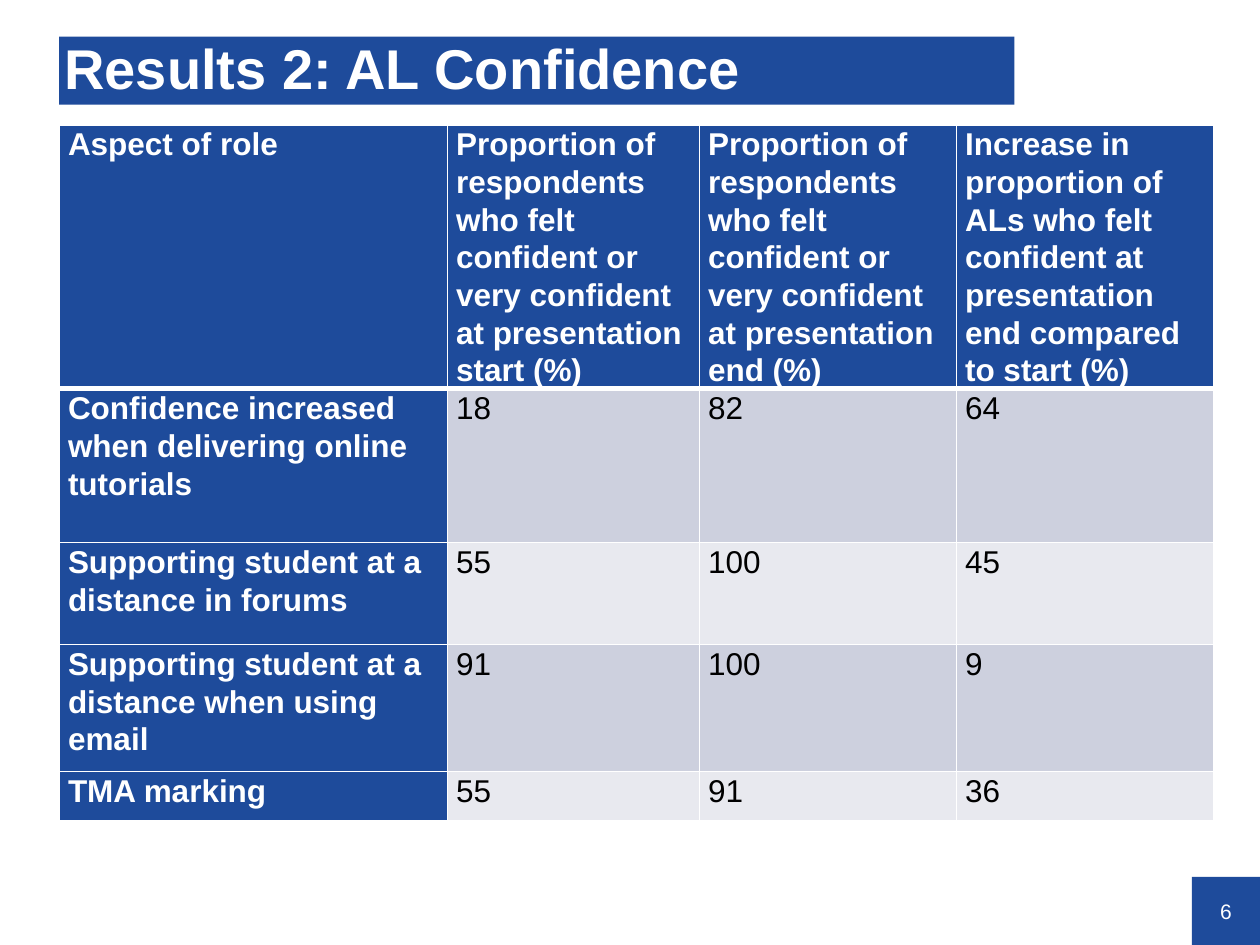
from lxml import etree
from pptx import Presentation
from pptx.dml.color import RGBColor
from pptx.enum.shapes import MSO_SHAPE
from pptx.enum.text import MSO_ANCHOR, PP_ALIGN
from pptx.oxml import parse_xml
from pptx.util import Inches, Pt

BLUE, WHITE, BLACK = "1E4B9B", "FFFFFF", "000000"
BANDS = ["CDD0DE", "E8E9EF"]
DRAWING_NS = "http://schemas.openxmlformats.org/drawingml/2006/main"


def paint(target, color):
    """Give a fill or a font a solid colour."""
    if hasattr(target, "solid"):
        target.solid()
        target.fore_color.rgb = RGBColor.from_string(color)
    else:
        target.color.rgb = RGBColor.from_string(color)


def write(frame, text, size=18, color=WHITE, bold=False, spacing=None,
          align=PP_ALIGN.LEFT):
    """Write one formatted paragraph into a text frame."""
    frame.word_wrap = True
    paragraph = frame.paragraphs[0]
    paragraph.alignment = align
    paragraph.line_spacing = spacing
    run = paragraph.add_run()
    run.text = text
    run.font.name = "Arial"
    run.font.size = Pt(size)
    run.font.bold = bold
    paint(run.font, color)


prs = Presentation()
prs.slide_width, prs.slide_height = Inches(10), Inches(7.5)
slide = prs.slides.add_slide(prs.slide_layouts[6])

# Page number and title bars
bars = [
    ((9.46, 6.96, 0.54, 0.54), (0, 0), "6",
     dict(size=12, align=PP_ALIGN.CENTER)),
    ((0.47, 0.29, 7.58, 0.54), (0.04, 0.02), "Results 2: AL Confidence",
     dict(size=32, bold=True, spacing=0.9)),
]
for box, (left_inset, top_inset), text, style in bars:
    bar = slide.shapes.add_shape(MSO_SHAPE.RECTANGLE, *map(Inches, box))
    bar.shadow.inherit = False
    paint(bar.fill, BLUE)
    bar.line.fill.background()
    frame = bar.text_frame
    frame.margin_left, frame.margin_top = Inches(left_inset), Inches(top_inset)
    frame.margin_right = frame.margin_bottom = 0
    frame.vertical_anchor = MSO_ANCHOR.MIDDLE
    write(frame, text, **style)

# Confidence table
rows = [
    ("Aspect of role",
     "Proportion of respondents who felt confident or very confident at presentation start (%)",
     "Proportion of respondents who felt confident or very confident at presentation end (%)",
     "Increase in proportion of ALs who felt confident at presentation end compared to start (%)"),
    ("Confidence increased when delivering online tutorials", "18", "82", "64"),
    ("Supporting student at a distance in forums", "55", "100", "45"),
    ("Supporting student at a distance when using email", "91", "100", "9"),
    ("TMA marking", "55", "91", "36"),
]
column_widths = [3.08, 2, 2.04, 2.04]
row_heights = [1.54, 1.22, 0.81, 1.01, 0.39]
confidence = slide.shapes.add_table(
    len(rows), len(column_widths), Inches(0.47), Inches(0.99),
    Inches(sum(column_widths)), Inches(sum(row_heights))).table
for column, width in zip(confidence.columns, column_widths):
    column.width = Inches(width)
for row, height in zip(confidence.rows, row_heights):
    row.height = Inches(height)

for r, texts in enumerate(rows):
    for c, text in enumerate(texts):
        cell = confidence.cell(r, c)
        heading = r == 0 or c == 0
        cell.margin_left = cell.margin_right = Inches(0.07)
        cell.margin_top = cell.margin_bottom = 0
        paint(cell.fill, BLUE if heading else BANDS[(r - 1) % 2])
        write(cell.text_frame, text, color=WHITE if heading else BLACK,
              bold=heading, spacing=1.07)

        # White rules, thicker between the header and the body
        thick_side = {0: "B", 1: "T"}.get(r)
        properties = cell._tc.get_or_add_tcPr()
        for position, side in enumerate("LRTB"):
            width = Pt(3 if side == thick_side else 1)
            rule = parse_xml(f'<a:ln{side} xmlns:a="{DRAWING_NS}" w="{width}"/>')
            fill = etree.SubElement(rule, f"{{{DRAWING_NS}}}solidFill")
            etree.SubElement(fill, f"{{{DRAWING_NS}}}srgbClr", val=WHITE)
            properties.insert(position, rule)

prs.save("out.pptx")
